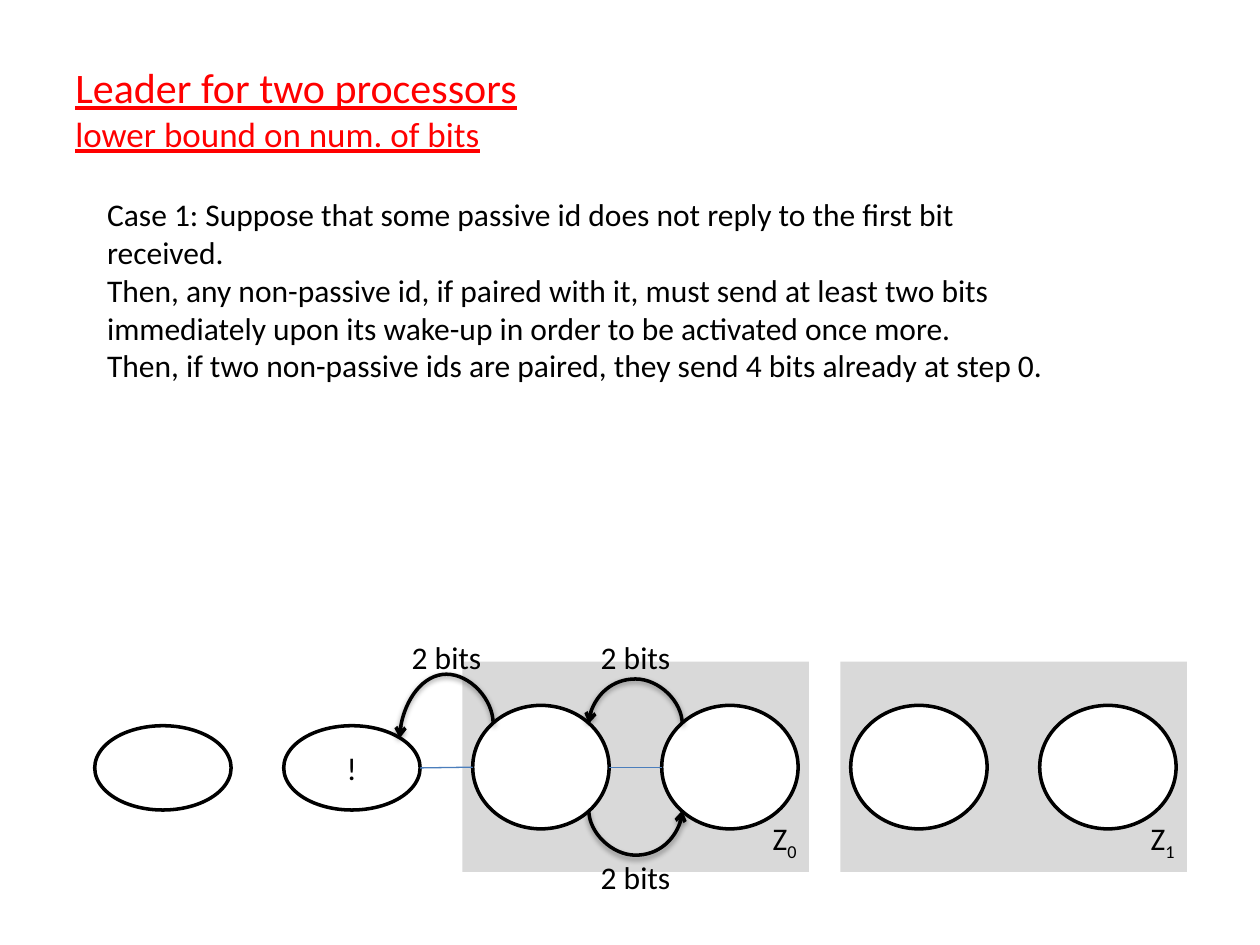
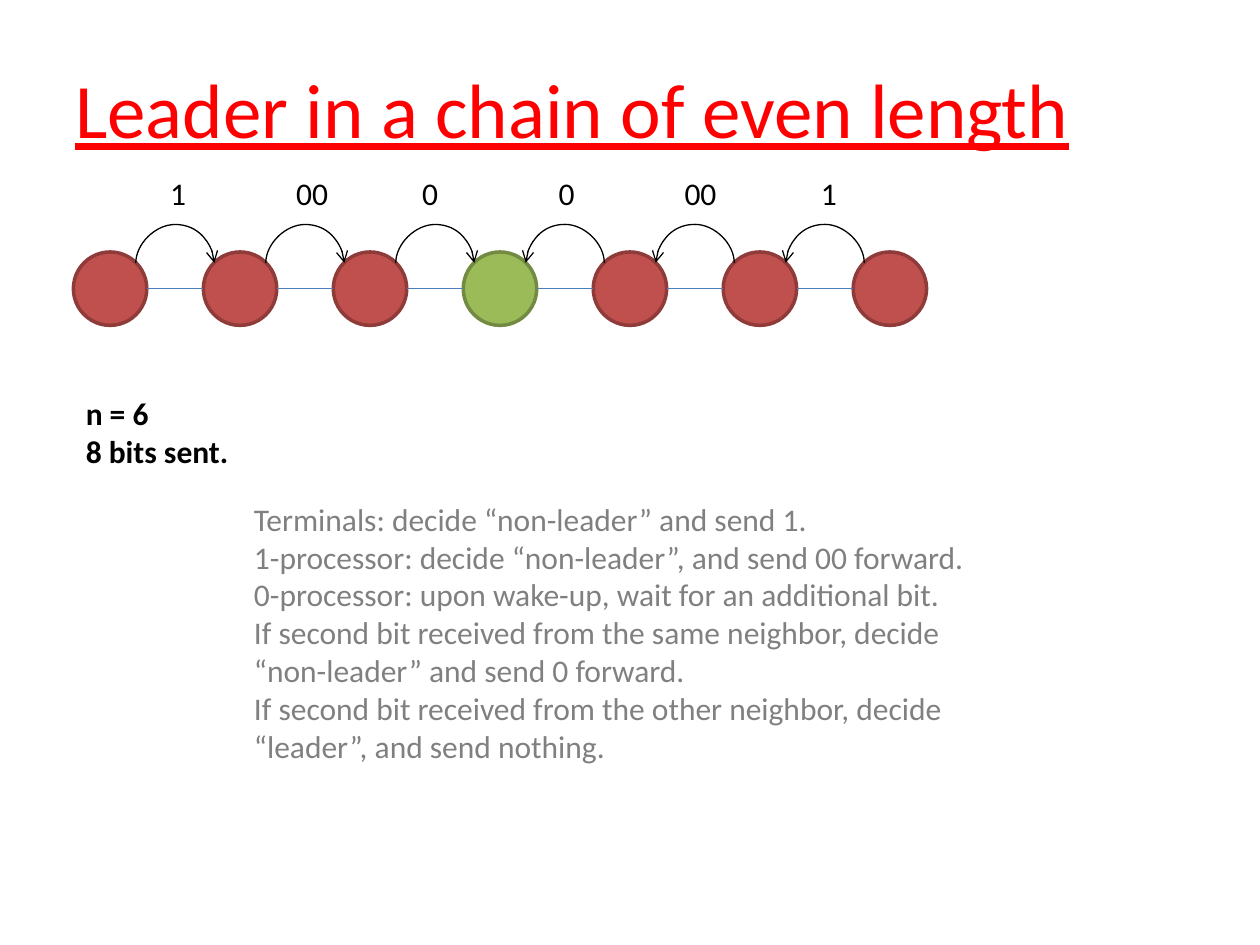
from lxml import etree
from pptx import Presentation
from pptx import util as u
from pptx.dml.color import RGBColor
from pptx.enum import shapes, text
from pptx.oxml.ns import qn

FONT = "Calibri"
COLORS = {
    "title": "FF0000", "ink": "000000", "muted": "808080", "paper": "FFFFFF",
    "band": "D9D9D9", "link": "4B7EBC", "node": "C0504D", "node_edge": "8E3B39",
    "leader": "9BBB59", "leader_edge": "738A42",
}
# Connection sites of an ellipse: index and place as fractions of its box
SITES = {
    "top_left": (1, 0.15, 0.15), "left": (2, 0, 0.5), "bottom_left": (3, 0.15, 0.85),
    "bottom_right": (5, 0.85, 0.85), "right": (6, 1, 0.5), "top_right": (7, 0.85, 0.15),
}
FLAT = 1588  # least depth of a curved connector, in EMU


def color(name):
    return RGBColor.from_string(COLORS[name])


def style(para, size=18, ink="ink", bold=False, underline=False):
    font = para.font
    font.name, font.size = FONT, u.Pt(size)
    font.bold, font.underline = bold, underline
    font.color.rgb = color(ink)


def add_text(page, left, top, width, height, lines, sizes=(18,), **look):
    """Write one paragraph per line; the last size serves all further lines."""
    box = page.shapes.add_textbox(u.Cm(left), u.Cm(top), u.Cm(width), u.Cm(height))
    frame = box.text_frame
    frame.word_wrap = True
    for i, line in enumerate(lines):
        para = frame.paragraphs[0] if i == 0 else frame.add_paragraph()
        para.add_run().text = line
        style(para, sizes[min(i, len(sizes) - 1)], **look)
    return box


def add_title(page, lines, sizes):
    box = add_text(page, 1.27, 0.43, 23.62, 3.5, lines, sizes, ink="title", underline=True)
    box.text_frame.vertical_anchor = text.MSO_ANCHOR.MIDDLE


def add_plain_shape(page, kind, left, top, width, height, fill):
    shape = page.shapes.add_shape(kind, u.Cm(left), u.Cm(top), u.Cm(width), u.Cm(height))
    shape.shadow.inherit = False
    shape.fill.solid()
    shape.fill.fore_color.rgb = color(fill)
    shape.line.fill.background()
    return shape


def add_oval(page, left, top, width, height, fill="paper", edge="ink", label=""):
    oval = add_plain_shape(page, shapes.MSO_SHAPE.OVAL, left, top, width, height, fill)
    oval.line.color.rgb = color(edge)
    oval.line.width = u.Pt(2)
    if label:
        para = oval.text_frame.paragraphs[0]
        para.add_run().text = label
        para.alignment = text.PP_ALIGN.CENTER
        style(para)
    return oval


def add_band(page, left, index):
    """Draw a grey band named Z with its index as a subscript."""
    band = add_plain_shape(page, shapes.MSO_SHAPE.RECTANGLE, left, 13.34, 6.99, 4.24, "band")
    frame = band.text_frame
    frame.vertical_anchor = text.MSO_ANCHOR.BOTTOM
    frame.margin_bottom = u.Cm(0.21)
    para = frame.paragraphs[0]
    para.alignment = text.PP_ALIGN.RIGHT
    para.add_run().text = "Z"
    span = para.add_run()
    span.text = index
    span.font._element.set("baseline", "-25000")
    style(para)


def site_point(oval, site):
    _, across, down = SITES[site]
    return oval.left + int(oval.width * across), oval.top + int(oval.height * down)


def finish_connector(line, start, start_site, end, end_site, ink, width):
    """Style a connector, clear its effects and tie it to both ovals."""
    line.line.color.rgb = color(ink)
    line.line.width = u.Pt(width)
    ties = line._element.nvCxnSpPr.cNvCxnSpPr
    for tag, oval, site in (("a:stCxn", start, start_site), ("a:endCxn", end, end_site)):
        etree.SubElement(ties, qn(tag), id=str(oval.shape_id), idx=str(SITES[site][0]))
    return etree.SubElement(line._element.spPr, qn("a:effectLst"))


def add_link(page, start, end):
    line = page.shapes.add_connector(
        shapes.MSO_CONNECTOR.STRAIGHT, *site_point(start, "right"), *site_point(end, "left"))
    finish_connector(line, start, "right", end, "left", "link", 0.75)


def add_soft_shadow(effects):
    shadow = etree.SubElement(effects, qn("a:outerShdw"), blurRad="40000", dist="20000",
                              dir="5400000", rotWithShape="0")
    ink = etree.SubElement(shadow, qn("a:srgbClr"), val=COLORS["ink"])
    etree.SubElement(ink, qn("a:alpha"), val="38000")


def add_message_arc(page, start, start_site, end, end_site, rise, width, shadow=False):
    """Bow an arrow upwards by rise (cm), or downwards if rise is negative."""
    x1, y1 = site_point(start, start_site)
    x2, y2 = site_point(end, end_site)
    drop = y2 - y1
    if abs(drop) < FLAT:
        drop = -FLAT if rise > 0 else FLAT
    run = x2 - x1
    mid_x, mid_y = (x1 + x2) // 2, (y1 + y2) // 2
    # The connector lies on its side and is then turned by 270 degrees
    arc = page.shapes.add_connector(
        shapes.MSO_CONNECTOR.CURVE,
        mid_x + drop // 2, mid_y - run // 2, mid_x - drop // 2, mid_y + run // 2)
    properties = arc._element.spPr
    properties.find(qn("a:xfrm")).set("rot", str(270 * 60000))
    bend = int(-u.Cm(rise) / drop * 100000)
    guides = properties.find(qn("a:prstGeom")).find(qn("a:avLst"))
    etree.SubElement(guides, qn("a:gd"), name="adj1", fmla=f"val {bend}")
    effects = finish_connector(arc, start, start_site, end, end_site, "ink", width)
    etree.SubElement(properties.find(qn("a:ln")), qn("a:tailEnd"), type="arrow")
    if shadow:
        add_soft_shadow(effects)


def build_lower_bound(page):
    for left, index in ((16.94, "1"), (9.32, "0")):
        add_band(page, left, index)
    add_text(page, 1.91, 3.81, 19.69, 4.88, [
        "Case 1: Suppose that some passive id does not reply to the first bit received.",
        "Then, any non-passive id, if paired with it, must send at least two bits "
        "immediately upon its wake-up in order to be activated once more.",
        "Then, if two non-passive ids are paired, they send 4 bits already at step 0.",
    ])
    ovals = []
    for i in range(6):
        top, height = (14.63, 1.7) if i < 2 else (14.22, 2.49)
        ovals.append(add_oval(page, 1.91 + 3.81 * i, top, 2.75, height,
                              label="!" if i == 1 else ""))
    passive, first, second = ovals[1:4]
    add_link(page, passive, first)
    add_link(page, first, second)
    for start, start_site, end, end_site, rise in (
            (first, "top_left", passive, "top_right", 1),
            (second, "top_left", first, "top_right", 1),
            (first, "bottom_right", second, "bottom_left", -1)):
        add_message_arc(page, start, start_site, end, end_site, rise, 2, shadow=True)
    for left, top in ((8.05, 12.73), (11.86, 12.73), (11.86, 17.17)):
        add_text(page, left, top, 2.33, 1.02, ["2 bits"])
    add_title(page, ["Leader for two processors", "lower bound on num. of bits"], (24, 20))


def build_chain(page):
    add_text(page, 1.48, 7.82, 22.86, 1.8, ["n = 6", "8 bits sent."], bold=True)
    add_title(page, ["Leader in a chain of even length"], (44,))
    leader = 3
    chain = []
    for i in range(7):
        kind = "leader" if i == leader else "node"
        chain.append(add_oval(page, 1.48 + 2.62 * i, 5.08, 1.48, 1.48, kind, kind + "_edge"))
    for i, (near, far) in enumerate(zip(chain, chain[1:])):
        add_link(page, near, far)
        if i < leader:
            add_message_arc(page, near, "top_right", far, "top_left", 0.86, 0.75)
        else:
            add_message_arc(page, far, "top_left", near, "top_right", 0.86, 0.75)
    bits = ("1", "00", "0", "0", "00", "1")
    for left, bit in zip((3.18, 5.72, 8.26, 11.01, 13.55, 16.3), bits):
        add_text(page, left, 3.39, 1.27, 1.02, [bit])
    add_text(page, 4.87, 9.95, 15.03, 5.64, [
        "Terminals: decide “non-leader” and send 1.",
        "1-processor: decide “non-leader”, and send 00 forward.",
        "0-processor: upon wake-up, wait for an additional bit.",
        "If second bit received from the same neighbor, decide “non-leader” and send 0 forward.",
        "If second bit received from the other neighbor, decide “leader”, and send nothing.",
    ], ink="muted")


def main():
    deck = Presentation()
    deck.slide_width, deck.slide_height = u.Cm(25.4), u.Cm(19.05)
    for build in (build_lower_bound, build_chain):
        build(deck.slides.add_slide(deck.slide_layouts[6]))
    deck.save("out.pptx")


if __name__ == "__main__":
    main()
